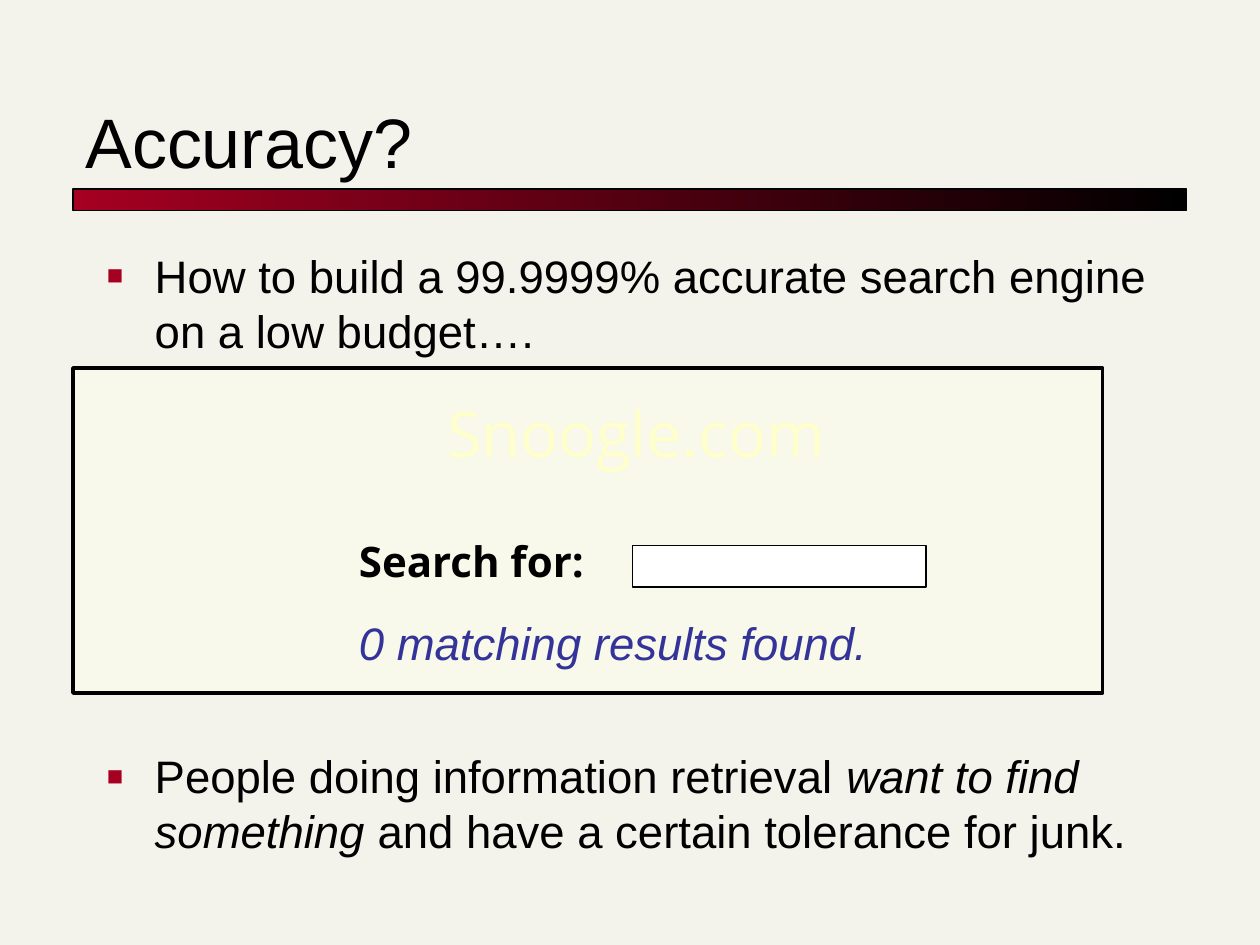
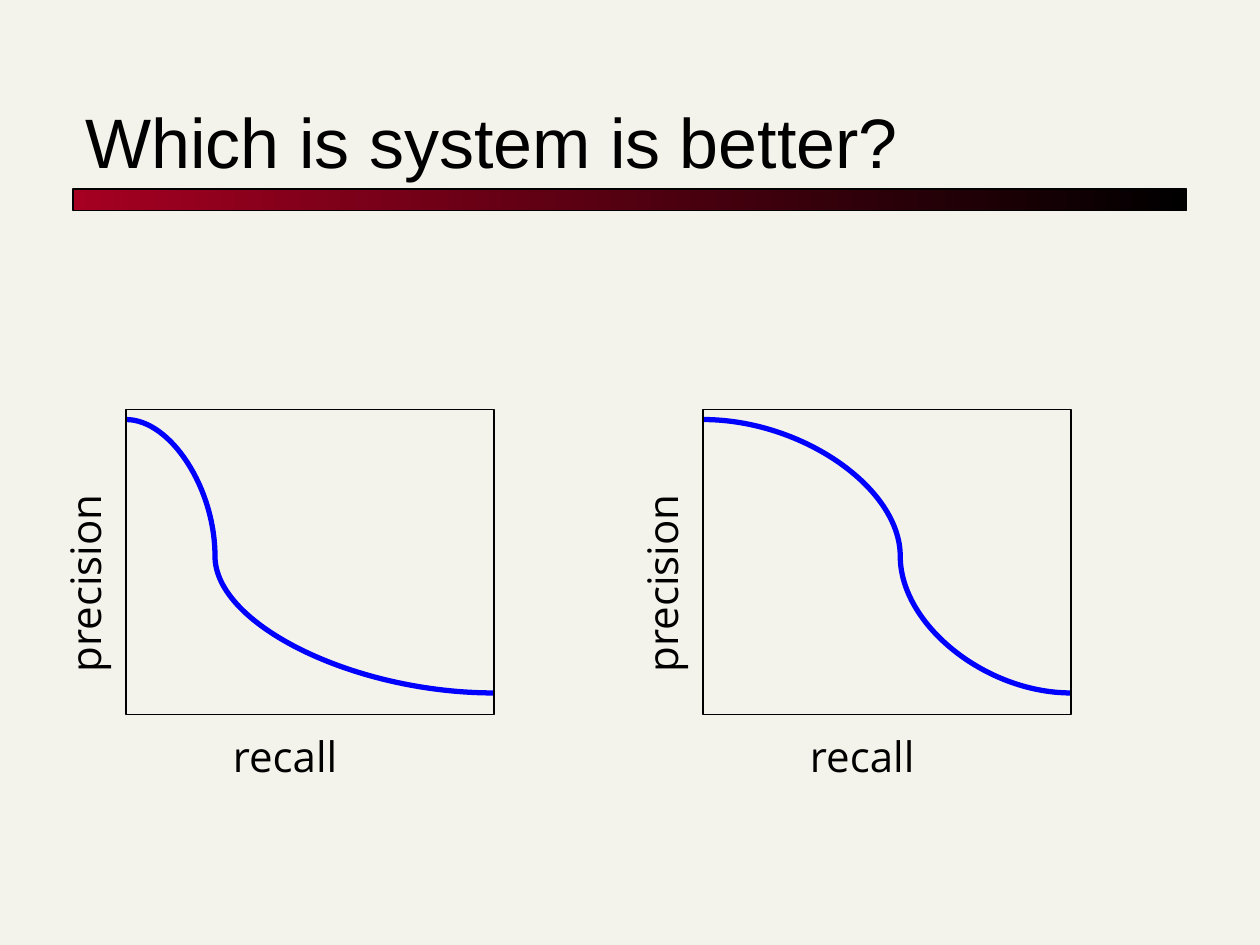
from lxml import etree
from pptx import Presentation
from pptx.dml.color import RGBColor
from pptx.enum.shapes import MSO_CONNECTOR, MSO_SHAPE
from pptx.enum.text import MSO_ANCHOR, PP_ALIGN
from pptx.oxml.ns import qn
from pptx.util import Inches, Pt

COLORS = {
    "background": "F4F3EB", "text": "000000", "accent": "A50021",
    "panel": "FCFEEC", "site": "FFFFCC", "field": "FFFFFF",
    "result": "333399", "curve": "0000FF",
}
HEADING, LABEL = "Arial", "Open Sans"

ACCURACY_TITLE = "Accuracy?"
# (top, [(text, italic), ...])
ACCURACY_BULLETS = [
    (1.92, [("How to build a 99.9999% accurate search engine on a low budget….", False)]),
    (5.89, [("People doing information retrieval ", False),
            ("want to find something", True),
            (" and have a certain tolerance for junk.", False)]),
]
SEARCH_PANEL = (0.58, 2.92, 8.17, 2.58)
SEARCH_FIELD = (5.02, 4.33, 2.33, 0.33)
# (text, box, style)
SEARCH_TEXTS = [
    ("Snoogle.com", (3.05, 3.08, 4, 0.78),
     dict(size=36, font=LABEL, color="site", align=PP_ALIGN.CENTER)),
    ("Search for:", (2.75, 4.2, 2.05, 0.5), dict(size=24, font=LABEL, bold=True)),
    ("0 matching results found.", (2.75, 4.83, 4.24, 0.53),
     dict(size=26, color="result", italic=True)),
]

SYSTEMS_TITLE = "Which is system is better?"
# (left edge of the plot, where the curve bends as a share of its width)
SYSTEM_PLOTS = [(1, 0.242), (5.58, 0.536)]
PLOT_TOP, PLOT_WIDTH, PLOT_HEIGHT = 3.25, 2.92, 2.42
CURVE_TOP, CURVE_BOTTOM = 3.33, 5.5
# (text, centre x from plot left, centre y, width, rotation)
AXIS_LABELS = [("recall", 1.29, 6, 1.08, 0), ("precision", -0.33, 4.59, 1.69, 270)]


def rgb(name):
    return RGBColor.from_string(COLORS[name])


def add_run(paragraph, text, size, font=HEADING, color="text", bold=False, italic=False):
    run = paragraph.add_run()
    run.text = text
    run.font.size = Pt(size)
    run.font.name = font
    run.font.color.rgb = rgb(color)
    run.font.bold = bold
    run.font.italic = italic


def add_frame(slide, box, wrap=True, rotation=0):
    text_box = slide.shapes.add_textbox(*map(Inches, box))
    text_box.rotation = rotation
    text_box.text_frame.word_wrap = wrap
    return text_box.text_frame


def add_label(slide, text, box, rotation=0, align=PP_ALIGN.LEFT, **style):
    paragraph = add_frame(slide, box, wrap=False, rotation=rotation).paragraphs[0]
    paragraph.alignment = align
    add_run(paragraph, text, **style)


def add_rectangle(slide, box, fill=None, line_width=0.75):
    rectangle = slide.shapes.add_shape(MSO_SHAPE.RECTANGLE, *map(Inches, box))
    rectangle.shadow.inherit = False
    if fill:
        rectangle.fill.solid()
        rectangle.fill.fore_color.rgb = rgb(fill)
    else:
        rectangle.fill.background()
    rectangle.line.color.rgb = rgb("text")
    rectangle.line.width = Pt(line_width)
    return rectangle


def add_titled_slide(deck, title):
    """Add a slide with the shared background, gradient band and title."""
    slide = deck.slides.add_slide(deck.slide_layouts[6])
    slide.background.fill.solid()
    slide.background.fill.fore_color.rgb = rgb("background")
    band = add_rectangle(slide, (0.58, 1.5, 8.84, 0.17))
    band.fill.gradient()
    band.fill.gradient_angle = 0
    for stop, position, color in zip(band.fill.gradient_stops, (0, 1), ("accent", "text")):
        stop.position = position
        stop.color.rgb = rgb(color)
    frame = add_frame(slide, (0.58, 0.42, 8.83, 1.08))
    frame.vertical_anchor = MSO_ANCHOR.BOTTOM
    add_run(frame.paragraphs[0], title, 40)
    return slide


def add_bullet(slide, top, runs):
    paragraph = add_frame(slide, (0.75, top, 8.5, 1)).paragraphs[0]
    properties = paragraph._p.get_or_add_pPr()
    properties.set("marL", str(Inches(0.38)))
    properties.set("indent", str(Inches(-0.38)))
    bullet_color = etree.SubElement(properties, qn("a:buClr"))
    etree.SubElement(bullet_color, qn("a:srgbClr"), val=COLORS["accent"])
    etree.SubElement(properties, qn("a:buSzPct"), val="60000")
    etree.SubElement(properties, qn("a:buFont"), typeface=HEADING)
    etree.SubElement(properties, qn("a:buChar"), char="■")
    for text, italic in runs:
        add_run(paragraph, text, 26, italic=italic)


def add_curve(slide, left, bend):
    curve = slide.shapes.add_connector(
        MSO_CONNECTOR.CURVE, Inches(left), Inches(CURVE_TOP),
        Inches(left + PLOT_WIDTH), Inches(CURVE_BOTTOM))
    curve.line.color.rgb = rgb("curve")
    curve.line.width = Pt(3)
    properties = curve._element.spPr
    etree.SubElement(properties, qn("a:effectLst"))
    adjustments = properties.find(qn("a:prstGeom")).get_or_add_avLst()
    etree.SubElement(adjustments, qn("a:gd"), name="adj1", fmla=f"val {round(bend * 100000)}")


def build_accuracy(deck):
    slide = add_titled_slide(deck, ACCURACY_TITLE)
    panel = add_rectangle(slide, SEARCH_PANEL, "panel", 2)
    panel_color = panel._element.spPr.find(qn("a:solidFill")).find(qn("a:srgbClr"))
    etree.SubElement(panel_color, qn("a:alpha"), val="50000")
    for top, runs in ACCURACY_BULLETS:
        add_bullet(slide, top, runs)
    add_rectangle(slide, SEARCH_FIELD, "field")
    for text, box, style in SEARCH_TEXTS:
        add_label(slide, text, box, **style)


def build_systems(deck):
    slide = add_titled_slide(deck, SYSTEMS_TITLE)
    for left, bend in SYSTEM_PLOTS:
        add_curve(slide, left, bend)
        add_rectangle(slide, (left, PLOT_TOP, PLOT_WIDTH, PLOT_HEIGHT))
        for text, offset, middle, width, rotation in AXIS_LABELS:
            box = (left + offset - width / 2, middle - 0.25, width, 0.5)
            add_label(slide, text, box, rotation, size=24, font=LABEL)


def main():
    deck = Presentation()
    deck.slide_width, deck.slide_height = Inches(10), Inches(7.5)
    build_accuracy(deck)
    build_systems(deck)
    deck.save("out.pptx")


if __name__ == "__main__":
    main()
